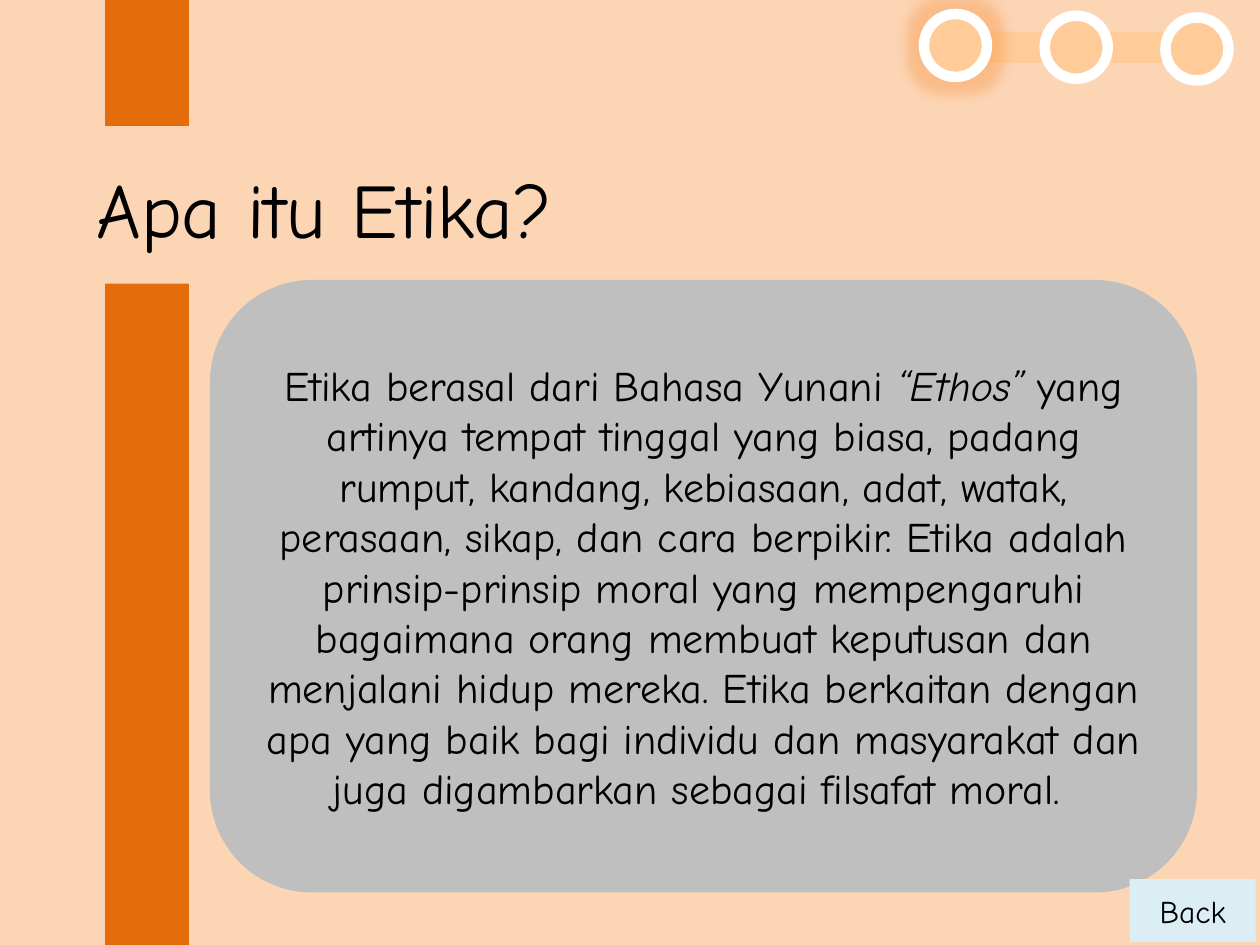
from lxml import etree
from pptx import Presentation
from pptx.dml.color import RGBColor
from pptx.enum import shapes, text
from pptx.oxml.ns import qn
from pptx.util import Pt

PEACH = RGBColor(0xFC, 0xD5, 0xB5)
ORANGE = RGBColor(0xE4, 0x6C, 0x0A)
GREY = RGBColor(0xBF, 0xBF, 0xBF)
PALE_BLUE = RGBColor(0xDB, 0xEE, 0xF4)
APRICOT = RGBColor(0xFF, 0xCC, 0x99)
GLOW = RGBColor(0xF7, 0x96, 0x46)
WHITE = RGBColor(0xFF, 0xFF, 0xFF)
BLACK = RGBColor(0, 0, 0)
FONT = "Comic Neue"
RECT = shapes.MSO_SHAPE.RECTANGLE

ETIKA = [
    ("Etika berasal dari Bahasa Yunani ", False),
    ("“Ethos” ", True),
    ("yang artinya tempat tinggal yang biasa, padang rumput, kandang, "
     "kebiasaan, adat, watak, perasaan, sikap, dan cara berpikir. Etika adalah "
     "prinsip-prinsip moral yang mempengaruhi bagaimana orang membuat keputusan "
     "dan menjalani hidup mereka. Etika berkaitan dengan apa yang baik bagi "
     "individu dan masyarakat dan juga digambarkan sebagai filsafat moral. ", False),
]


def add_box(s, kind, box, fill):
    sp = s.shapes.add_shape(kind, *map(Pt, box))
    sp.shadow.inherit = False
    sp.fill.solid()
    sp.fill.fore_color.rgb = fill
    sp.line.fill.background()
    return sp


def write(sp, runs, size, align):
    """Fill a shape with one paragraph of (wording, italic) runs."""
    tf = sp.text_frame
    tf.word_wrap = True
    tf.vertical_anchor = text.MSO_ANCHOR.MIDDLE
    p = tf.paragraphs[0]
    p.alignment = align
    for wording, italic in runs:
        r = p.add_run()
        r.text = wording
        r.font.name = FONT
        r.font.size = Pt(size)
        r.font.italic = italic
        r.font.color.rgb = BLACK


def add_ring(s, left, top):
    sp = add_box(s, shapes.MSO_SHAPE.OVAL, (left, top, 36, 36), APRICOT)
    sp.line.color.rgb = WHITE
    sp.line.width = Pt(6)
    return sp


def add_glow(sp, radius, color, opacity):
    effects = sp._element.spPr.find(qn("a:effectLst"))
    glow = etree.SubElement(effects, qn("a:glow"), rad=str(Pt(radius)))
    clr = etree.SubElement(glow, qn("a:srgbClr"), val=str(color))
    etree.SubElement(clr, qn("a:alpha"), val=str(opacity * 1000))


def main():
    prs = Presentation()
    prs.slide_width, prs.slide_height = Pt(720), Pt(540)
    s = prs.slides.add_slide(prs.slide_layouts[6])
    s.background.fill.solid()
    s.background.fill.fore_color.rgb = PEACH

    for top, height in ((0, 72), (162, 378)):
        add_box(s, RECT, (60, top, 48, height), ORANGE)

    title = s.shapes.add_textbox(*map(Pt, (48, 76.5, 582, 84)))
    write(title, [("Apa itu Etika?", False)], 44, text.PP_ALIGN.LEFT)

    panel = add_box(s, shapes.MSO_SHAPE.ROUNDED_RECTANGLE, (120, 160, 564, 350), GREY)
    write(panel, ETIKA, 24, text.PP_ALIGN.CENTER)

    back = add_box(s, RECT, (645.6, 502.4, 72, 36), PALE_BLUE)
    write(back, [("Back", False)], 18, text.PP_ALIGN.CENTER)

    add_box(s, RECT, (528, 18, 174, 18), APRICOT)
    rings = [add_ring(s, 528 + 69 * i, 8 + i) for i in range(3)]
    add_glow(rings[0], 14, GLOW, 40)

    prs.save("out.pptx")


if __name__ == "__main__":
    main()
